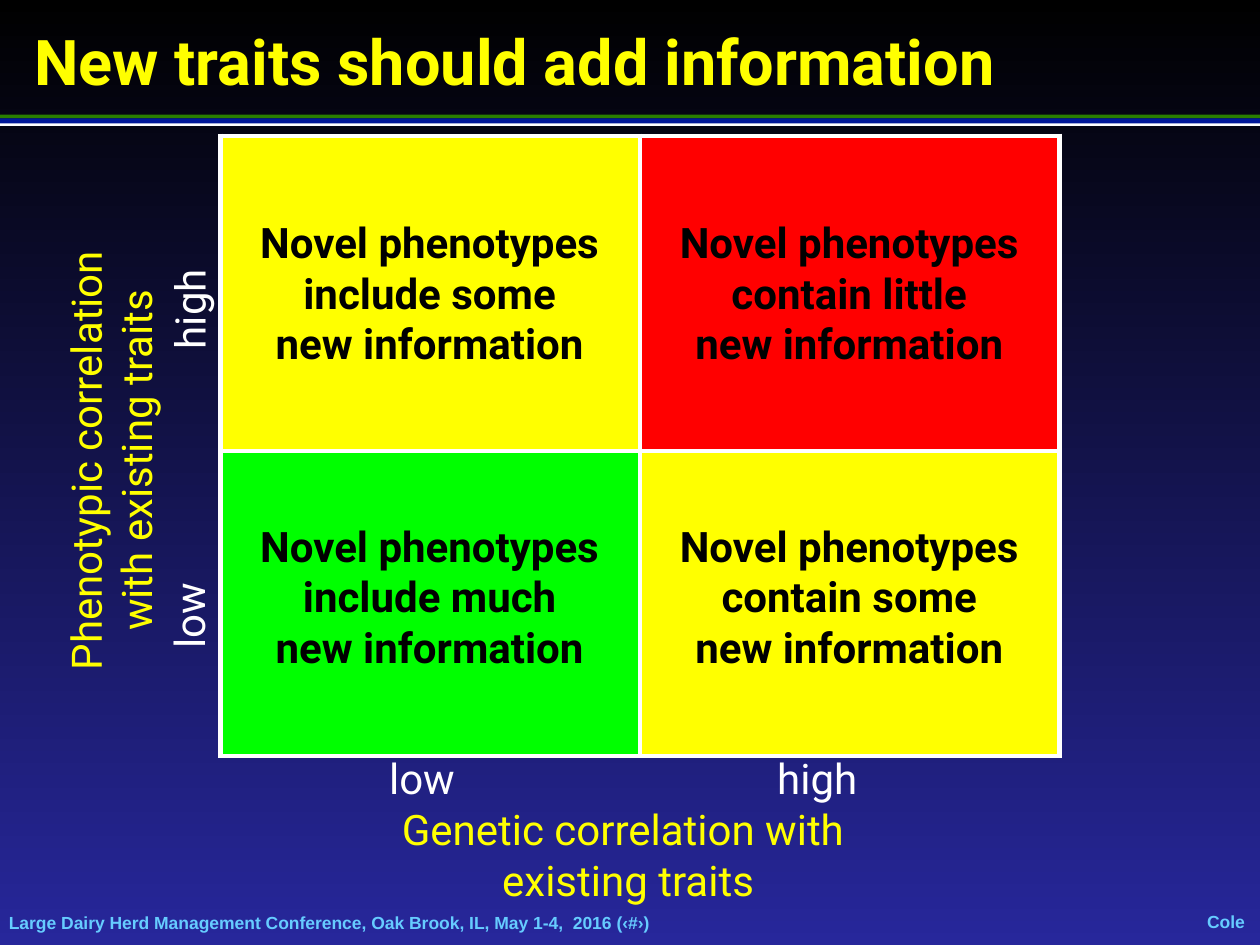
from dataclasses import dataclass

from lxml import etree
from pptx import Presentation
from pptx.dml.color import RGBColor
from pptx.enum.shapes import MSO_SHAPE
from pptx.enum.text import MSO_ANCHOR, MSO_AUTO_SIZE, PP_ALIGN
from pptx.oxml.ns import qn
from pptx.util import Inches, Pt

RECTANGLE = MSO_SHAPE.RECTANGLE
MIDDLE = MSO_ANCHOR.MIDDLE
FIT_SHAPE = MSO_AUTO_SIZE.SHAPE_TO_FIT_TEXT
NO_FIT = MSO_AUTO_SIZE.NONE
LEFT = PP_ALIGN.LEFT
CENTER = PP_ALIGN.CENTER
TITLE_ONLY = 5


@dataclass(frozen=True)
class Theme:
    font: str = "Roboto"
    footer_font: str = "Arial"
    title_size: int = 36
    body_size: int = 24
    footer_size: int = 10
    border_width: int = 3
    black: str = "000000"
    white: str = "FFFFFF"
    yellow: str = "FFFF00"
    red: str = "FF0000"
    green: str = "00FF00"
    navy: str = "27279B"
    footer: str = "66CCFF"
    rule_green: str = "2A7E00"
    rule_blue: str = "001799"


def write_text(frame, lines, *, font, size, color, bold=False, align=LEFT):
    for index, line in enumerate(lines):
        paragraph = frame.paragraphs[0] if index == 0 else frame.add_paragraph()
        paragraph.alignment = align
        run = paragraph.add_run()
        run.text = line
        run.font.name = font
        run.font.size = Pt(size)
        run.font.bold = bold
        run.font.color.rgb = RGBColor.from_string(color)


class SlideBuilder:
    def __init__(self, slide, theme):
        self.slide = slide
        self.theme = theme

    def background(self, top_color, bottom_color):
        fill = self.slide.background.fill
        fill.gradient()
        fill.gradient_angle = 270
        for stop, position, color in zip(
            fill.gradient_stops, (0, 1), (top_color, bottom_color)
        ):
            stop.position = position
            stop.color.rgb = RGBColor.from_string(color)

    def title(self, text, left, top, width, height):
        title = self.slide.shapes.title
        title.left, title.top = Inches(left), Inches(top)
        title.width, title.height = Inches(width), Inches(height)
        frame = title.text_frame
        frame.auto_size = NO_FIT
        frame.vertical_anchor = MIDDLE
        write_text(frame, [text], font=self.theme.font, size=self.theme.title_size,
                   color=self.theme.yellow, bold=True)

    def rule(self, top, height, color):
        bar = self.slide.shapes.add_shape(
            RECTANGLE, 0, Inches(top), Inches(10), Inches(height))
        bar.shadow.inherit = False
        bar.fill.solid()
        bar.fill.fore_color.rgb = RGBColor.from_string(color)
        bar.line.fill.background()

    def label(self, lines, left, top, width, height, color, rotation=0, **style):
        box = self.slide.shapes.add_textbox(
            Inches(left), Inches(top), Inches(width), Inches(height))
        box.rotation = rotation
        frame = box.text_frame
        frame.word_wrap = False
        frame.auto_size = FIT_SHAPE
        write_text(frame, lines, font=self.theme.font, size=self.theme.body_size,
                   color=color, **style)

    def footer(self, text, left, top, width, height, wrap, align):
        box = self.slide.shapes.add_textbox(
            Inches(left), Inches(top), Inches(width), Inches(height))
        frame = box.text_frame
        frame.margin_left = frame.margin_right = 0
        frame.margin_top = frame.margin_bottom = 0
        frame.word_wrap = wrap
        frame.auto_size = FIT_SHAPE
        frame.vertical_anchor = MIDDLE
        write_text(frame, [text], font=self.theme.footer_font,
                   size=self.theme.footer_size, color=self.theme.footer,
                   bold=True, align=align)

    def border(self, cell):
        properties = cell._tc.get_or_add_tcPr()
        for index, side in enumerate(("a:lnL", "a:lnR", "a:lnT", "a:lnB")):
            line = etree.Element(qn(side), w=str(Pt(self.theme.border_width)))
            fill = etree.SubElement(line, qn("a:solidFill"))
            etree.SubElement(fill, qn("a:srgbClr"), val=self.theme.white)
            properties.insert(index, line)

    def matrix(self, colors, left, top, column_width, row_heights):
        columns = len(colors[0])
        table = self.slide.shapes.add_table(
            len(colors), columns, Inches(left), Inches(top),
            Inches(column_width * columns), Inches(sum(row_heights))).table
        table.first_row = False
        table.horz_banding = False
        for column in table.columns:
            column.width = Inches(column_width)
        for row, height in enumerate(row_heights):
            table.rows[row].height = Inches(height)
            for column, color in enumerate(colors[row]):
                cell = table.cell(row, column)
                cell.fill.solid()
                cell.fill.fore_color.rgb = RGBColor.from_string(color)
                self.border(cell)


def main():
    theme = Theme()
    presentation = Presentation()
    presentation.slide_width = Inches(10)
    presentation.slide_height = Inches(7.5)
    slide = presentation.slides.add_slide(presentation.slide_layouts[TITLE_ONLY])
    builder = SlideBuilder(slide, theme)

    builder.background(theme.black, theme.navy)
    builder.footer(
        "Large Dairy Herd Management Conference, Oak Brook, IL, May 1-4,  2016 (‹#›)",
        0.07, 7.24, 8.09, 0.17, wrap=True, align=LEFT)
    builder.footer("Cole", 9.58, 7.23, 0.3, 0.17, wrap=False, align=CENTER)
    builder.rule(0.91, 0.03, theme.rule_green)
    builder.rule(0.97, 0.03, theme.white)
    builder.rule(0.94, 0.04, theme.rule_blue)
    builder.title("New traits should add information", 0.17, 0.13, 9.66, 0.7)

    for level, left, top, width, rotation in (
        ("low", 2.99, 5.92, 0.73, 0),
        ("high", 6.07, 5.92, 0.84, 0),
        ("low", 1.13, 4.63, 0.73, 270),
        ("high", 1.08, 2.2, 0.84, 270),
    ):
        builder.label([level], left, top, width, 0.5, theme.white, rotation)

    builder.label(["Phenotypic correlation", "with existing traits"],
                  -0.93, 3.2, 3.62, 0.91, theme.yellow, 270, align=CENTER)
    builder.label(["Genetic correlation with ", "existing traits"],
                  2.98, 6.33, 4.01, 0.91, theme.yellow, align=CENTER)

    matrix_left, column_width = 1.75, 3.33
    builder.matrix(
        [[theme.yellow, theme.red], [theme.green, theme.yellow]],
        matrix_left, 1.08, column_width, (2.5, 2.42))

    findings = (("include some", "contain little"), ("include much", "contain some"))
    for row, row_findings in enumerate(findings):
        for column, finding in enumerate(row_findings):
            builder.label(
                ["Novel phenotypes", finding, "new information"],
                matrix_left + 0.11 + column * column_width, 1.67 + row * 2.41,
                3.1, 1.31, theme.black, bold=True, align=CENTER)

    presentation.save("out.pptx")


if __name__ == "__main__":
    main()
